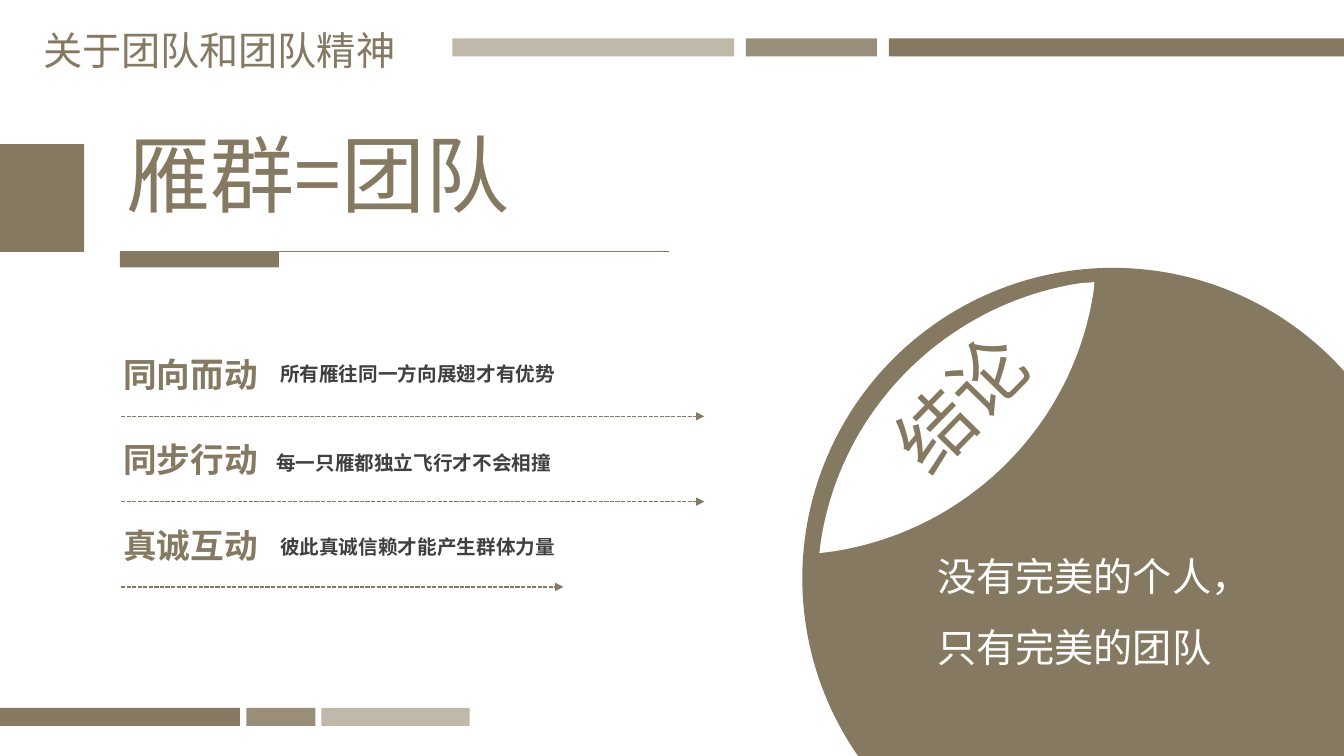
import lxml.etree
import pptx
import pptx.dml.color
import pptx.enum.dml
import pptx.enum.shapes
import pptx.enum.text
import pptx.oxml
import pptx.oxml.ns
import pptx.util

Cm = pptx.util.Cm
Pt = pptx.util.Pt
Align = pptx.enum.text.PP_ALIGN
Anchor = pptx.enum.text.MSO_ANCHOR
AutoSize = pptx.enum.text.MSO_AUTO_SIZE
Preset = pptx.enum.shapes.MSO_SHAPE
qn = pptx.oxml.ns.qn

COLORS = {"brown": "857961", "sand": "C0B8A8", "dark": "404040", "white": "FFFFFF"}
FONT = "Noto Sans CJK SC"


def rgb(name):
    return pptx.dml.color.RGBColor.from_string(COLORS[name])


def curve(start, first, second, end, steps=40):
    """Return points along a cubic Bezier curve, without its start."""
    points = []
    for step in range(1, steps + 1):
        t = step / steps
        weights = ((1 - t) ** 3, 3 * t * (1 - t) ** 2, 3 * t * t * (1 - t), t ** 3)
        corners = (start, first, second, end)
        points.append(tuple(sum(w * c[axis] for w, c in zip(weights, corners))
                            for axis in (0, 1)))
    return points


class SlidePainter:
    """Holds the current slide and draws in its style; lengths are in cm."""

    def __init__(self, page):
        self.page = page

    def paint(self, shape, color, alpha=None):
        shape.shadow.inherit = False
        shape.fill.solid()
        shape.fill.fore_color.rgb = rgb(color)
        shape.line.fill.background()
        if alpha:
            tint = shape._element.spPr.find(qn("a:solidFill")).find(qn("a:srgbClr"))
            lxml.etree.SubElement(tint, qn("a:alpha")).set("val", str(alpha * 1000))

    def shape(self, preset, left, top, width, height, color="brown", alpha=None):
        shape = self.page.shapes.add_shape(preset, Cm(left), Cm(top), Cm(width), Cm(height))
        self.paint(shape, color, alpha)

    def outline(self, points, color):
        corners = [(Cm(x), Cm(y)) for x, y in points]
        builder = self.page.shapes.build_freeform(*corners[0])
        builder.add_line_segments(corners[1:], close=True)
        self.paint(builder.convert_to_shape(), color)

    def line(self, left, right, top, width, arrow=False):
        line = self.page.shapes.add_connector(
            pptx.enum.shapes.MSO_CONNECTOR.STRAIGHT, Cm(left), Cm(top), Cm(right), Cm(top))
        line.line.color.rgb = rgb("brown")
        line.line.width = Pt(width)
        properties = line._element.spPr
        if arrow:
            line.line.dash_style = pptx.enum.dml.MSO_LINE.SQUARE_DOT
            stroke = properties.find(qn("a:ln"))
            stroke.find(qn("a:prstDash")).set("val", "sysDash")
            lxml.etree.SubElement(stroke, qn("a:tailEnd")).set("type", "triangle")
        lxml.etree.SubElement(properties, qn("a:effectLst"))

    def fill_text(self, box, lines, size, color, bold=False, align=Align.LEFT, spacing=1.0,
                  **frame_format):
        frame = box.text_frame
        values = {"word_wrap": True, "vertical_anchor": Anchor.TOP,
                  "auto_size": AutoSize.SHAPE_TO_FIT_TEXT} | frame_format
        for name, value in values.items():
            setattr(frame, name, value)
        for index, line in enumerate(lines):
            para = frame.add_paragraph() if index else frame.paragraphs[0]
            para.alignment = align
            para.line_spacing = spacing
            span = para.add_run()
            span.text = line
            span.font.color.rgb = rgb(color)
            for name, value in {"size": Pt(size), "bold": bold, "name": FONT}.items():
                setattr(span.font, name, value)
            east_asian = lxml.etree.SubElement(span._r.get_or_add_rPr(), qn("a:ea"))
            east_asian.set("typeface", FONT)

    def text(self, left, top, width, height, lines, size, color="brown", rotation=0, **style):
        box = self.page.shapes.add_textbox(Cm(left), Cm(top), Cm(width), Cm(height))
        box.rotation = rotation
        self.fill_text(box, lines, size, color, **style)

    def title(self, left, top, width, height, text, size):
        box = self.page.shapes.title
        place = {"left": left, "top": top, "width": width, "height": height}
        for name, value in place.items():
            setattr(box, name, Cm(value))
        self.fill_text(box, [text], size, "brown")


def main():
    deck = pptx.Presentation()
    deck.slide_width, deck.slide_height = Cm(33.87), Cm(19.05)
    painter = SlidePainter(deck.slides.add_slide(deck.slide_layouts[5]))
    painter.title(0.83, 0.53, 9.94, 1.45, "关于团队和团队精神", 28)

    bars = [
        (22.4, 0.97, 11.47, "brown", None),
        (18.8, 0.97, 3.3, "brown", 84),
        (11.4, 0.97, 7.1, "sand", None),
        (0, 17.84, 6.05, "brown", None),
        (6.21, 17.84, 1.74, "brown", 84),
        (8.1, 17.84, 3.74, "sand", None),
    ]
    for left, top, width, color, alpha in bars:
        painter.shape(Preset.RECTANGLE, left, top, width, 0.45, color, alpha)

    painter.shape(Preset.RECTANGLE, 0, 3.63, 2.12, 2.72)
    painter.text(2.95, 2.95, 13.84, 2.82, ["雁群=团队"], 60)
    painter.line(3.02, 16.86, 6.34, 0.5)
    painter.shape(Preset.RECTANGLE, 3.02, 6.34, 4.01, 0.4)

    points = [
        ("同向而动", "所有雁往同一方向展翅才有优势", 6.81, 8.81, 10.29, Pt(22), 17.75),
        ("同步行动", "每一只雁都独立飞行才不会相撞", 6.71, 11.23, 9.73, 1.0, 17.75),
        ("真诚互动", "彼此真诚信赖才能产生群体力量", 6.81, 13.36, 8.1, 1.0, 14.2),
    ]
    for row, (label, detail, left, top, width, spacing, arrow_end) in enumerate(points):
        offset = row * 2.15
        painter.text(3.05, 8.92 + offset, 3.51, 1.02, [label], 24, bold=True,
                     align=Align.CENTER, word_wrap=False, vertical_anchor=Anchor.MIDDLE,
                     auto_size=AutoSize.NONE)
        painter.text(left, top, width, 0.9, [detail], 14, "dark", bold=True, spacing=spacing)
        painter.line(3.05, arrow_end, 10.49 + offset, 1, arrow=True)

    painter.shape(Preset.OVAL, 20.22, 6.75, 15.65, 15.65)
    lower_edge = curve((27.56, 7.34), (27.05, 10.72), (24.38, 13.36), (21.03, 13.89))
    upper_edge = curve((20.68, 13.69), (21.18, 10.31), (23.85, 7.67), (27.2, 7.14))
    painter.outline([(27.58, 7.11), (27.56, 7.34), *lower_edge,
                     (20.65, 13.94), (20.68, 13.69), *upper_edge], "white")
    painter.text(22.05, 8.84, 4.37, 2.57, ["结论"], 54, rotation=314.4, word_wrap=False)
    painter.text(23.37, 13.21, 7.87, 5.64, ["没有完美的个人，", "只有完美的团队"], 28, "white",
                 spacing=1.5)
    deck.save("out.pptx")


if __name__ == "__main__":
    main()
